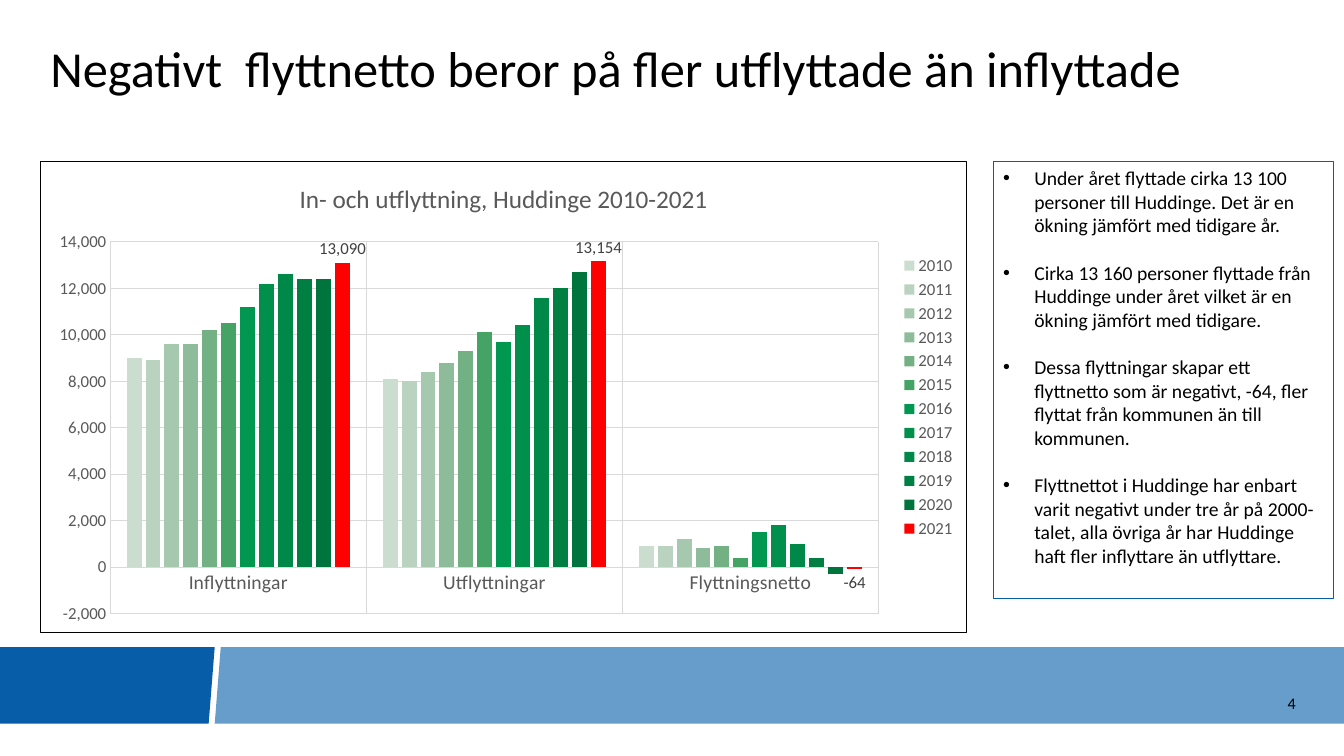
import pptx
import pptx.chart.data
import pptx.dml.color
import pptx.enum.chart
import pptx.enum.text
import pptx.oxml
import pptx.util
from pptx.dml.color import RGBColor
from pptx.util import Inches, Pt

FONT = "Calibri"
BLACK = RGBColor(0x00, 0x00, 0x00)
DARK = RGBColor(0x40, 0x40, 0x40)
GREY = RGBColor(0x59, 0x59, 0x59)
PALE = RGBColor(0xD9, 0xD9, 0xD9)
BLUE = RGBColor(0x08, 0x5D, 0xA9)
SKY = RGBColor(0x66, 0x9D, 0xCB)
NS = ('xmlns:c="http://schemas.openxmlformats.org/drawingml/2006/chart" '
      'xmlns:a="http://schemas.openxmlformats.org/drawingml/2006/main"')

GROUPS = ["Inflyttningar", "Utflyttningar", "Flyttningsnetto"]
YEARS = [
    ("2010", (9000, 8100, 900), "CBDDCF"),
    ("2011", (8900, 8000, 900), "B9D3C0"),
    ("2012", (9600, 8400, 1200), "A6C8AE"),
    ("2013", (9600, 8800, 800), "8EBC9A"),
    ("2014", (10200, 9300, 900), "73B184"),
    ("2015", (10500, 10100, 400), "45A365"),
    ("2016", (11200, 9700, 1500), "009850"),
    ("2017", (12200, 10400, 1800), "00904C"),
    ("2018", (12600, 11600, 1000), "008848"),
    ("2019", (12400, 12000, 400), "007F43"),
    ("2020", (12400, 12700, -300), "00743D"),
    ("2021", (13090, 13154, -64), "FF0000"),
]
NOTES = [
    "Under året flyttade cirka 13 100 personer till Huddinge. Det är en ökning "
    "jämfört med tidigare år.",
    "Cirka 13 160 personer flyttade från Huddinge under året vilket är en ökning "
    "jämfört med tidigare.",
    "Dessa flyttningar skapar ett flyttnetto som är negativt, -64, fler flyttat "
    "från kommunen än till kommunen.",
    "Flyttnettot i Huddinge har enbart varit negativt under tre år på 2000-talet, "
    "alla övriga år har Huddinge haft fler inflyttare än utflyttare.",
]


def style(font, size, color=BLACK):
    font.name = FONT
    font.size = Pt(size)
    font.color.rgb = color


def place(shape, box):
    shape.left, shape.top, shape.width, shape.height = map(Inches, box)


def add_band(slide, box):
    """Footer band in two parts, split by a slanted gap."""
    left, top, width, height = box
    right, low = left + width, top + height
    split, slant, gap = left + 2.13, 0.06, 0.06
    parts = [
        (SKY, [(split + gap, top), (right, top), (right, low),
               (split + gap - slant, low)]),
        (BLUE, [(left, top), (split, top), (split - slant, low), (left, low)]),
    ]
    for color, points in parts:
        points = [(Inches(x), Inches(y)) for x, y in points]
        outline = slide.shapes.build_freeform(*points[0])
        outline.add_line_segments(points[1:])
        part = outline.convert_to_shape()
        part.shadow.inherit = False
        part.fill.solid()
        part.fill.fore_color.rgb = color
        part.line.fill.background()


def add_title(slide, box):
    title = slide.shapes.title
    place(title, box)
    frame = title.text_frame
    frame.text = "Negativt  flyttnetto beror på fler utflyttade än inflyttade"
    frame.vertical_anchor = pptx.enum.text.MSO_ANCHOR.TOP
    para = frame.paragraphs[0]
    para.alignment = pptx.enum.text.PP_ALIGN.LEFT
    para.line_spacing = 0.9
    style(para.runs[0].font, 36)


def add_number(slide, box):
    frame = slide.shapes.add_textbox(*map(Inches, box)).text_frame
    frame.word_wrap = True
    frame.vertical_anchor = pptx.enum.text.MSO_ANCHOR.MIDDLE
    frame.text = "4"
    para = frame.paragraphs[0]
    para.alignment = pptx.enum.text.PP_ALIGN.RIGHT
    style(para.runs[0].font, 11.5)


def add_notes(slide, box):
    panel = slide.shapes.add_textbox(*map(Inches, box))
    panel.line.color.rgb = BLUE
    panel.line.width = Pt(0.75)
    frame = panel.text_frame
    frame.word_wrap = True
    for i, note in enumerate(NOTES):
        para = frame.add_paragraph() if i else frame.paragraphs[0]
        para.text = note
        if i:
            para.space_before = Pt(17)
        props = para._p.get_or_add_pPr()
        props.set("marL", str(Inches(0.31)))
        props.set("indent", str(-Inches(0.31)))
        props.append(pptx.oxml.parse_xml(f'<a:buFont {NS} typeface="Arial"/>'))
        props.append(pptx.oxml.parse_xml(f'<a:buChar {NS} char="•"/>'))
        style(para.runs[0].font, 14)


def style_axis(axis, size):
    style(axis.tick_labels.font, size, GREY)
    axis.major_tick_mark = pptx.enum.chart.XL_TICK_MARK.NONE
    axis.has_major_gridlines = True
    grid = axis.major_gridlines.format.line
    grid.color.rgb = PALE
    grid.width = Pt(0.75)


def frame_chart(chart):
    """Draw the outer border and fix the inner plot area."""
    chart._chartSpace.chart.addnext(pptx.oxml.parse_xml(
        f'<c:spPr {NS}><a:noFill/><a:ln w="{Pt(0.75)}"><a:solidFill>'
        f'<a:srgbClr val="{BLACK}"/></a:solidFill></a:ln></c:spPr>'))
    plot = chart._chartSpace.chart.plotArea
    for old in plot.xpath("c:layout"):
        plot.remove(old)
    sizes = {"x": 0.075, "y": 0.17, "w": 0.83, "h": 0.79}
    edges = "".join(f'<c:{key} val="{val}"/>' for key, val in sizes.items())
    plot.insert(0, pptx.oxml.parse_xml(
        f'<c:layout {NS}><c:manualLayout><c:layoutTarget val="inner"/>'
        f'<c:xMode val="edge"/><c:yMode val="edge"/>{edges}'
        f'</c:manualLayout></c:layout>'))


def add_chart(slide, box):
    data = pptx.chart.data.CategoryChartData(number_format="#,##0")
    data.categories = GROUPS
    for year, values, _ in YEARS:
        data.add_series(year, values)
    kind = pptx.enum.chart.XL_CHART_TYPE.COLUMN_CLUSTERED
    chart = slide.shapes.add_chart(kind, *map(Inches, box), data).chart
    style(chart.font, 12)

    chart.has_title = True
    title = chart.chart_title
    title.include_in_layout = False
    title.text_frame.text = "In- och utflyttning, Huddinge 2010-2021"
    font = title.text_frame.paragraphs[0].runs[0].font
    style(font, 18, GREY)
    font.bold = False

    chart.has_legend = True
    chart.legend.position = pptx.enum.chart.XL_LEGEND_POSITION.RIGHT
    chart.legend.include_in_layout = False
    style(chart.legend.font, 12, GREY)

    style_axis(chart.category_axis, 14)
    chart.category_axis.format.line.color.rgb = PALE
    chart.category_axis.format.line.width = Pt(0.75)
    axis = chart.value_axis
    style_axis(axis, 12)
    axis.format.line.fill.background()
    axis.minimum_scale, axis.maximum_scale, axis.major_unit = -2000, 14000, 2000
    axis.tick_labels.number_format = "#,##0"
    axis.tick_labels.number_format_is_linked = False

    plot = chart.plots[0]
    plot.gap_width, plot.overlap = 219, -27
    plot.vary_by_categories = False
    for series, (_, _, color) in zip(plot.series, YEARS):
        series.invert_if_negative = False
        series.format.fill.solid()
        series.format.fill.fore_color.rgb = RGBColor.from_string(color)
    labels = plot.series[-1].data_labels
    labels.show_value = True
    labels.position = pptx.enum.chart.XL_LABEL_POSITION.OUTSIDE_END
    labels.number_format = "#,##0"
    labels.number_format_is_linked = False
    style(labels.font, 12, DARK)
    frame_chart(chart)


def main():
    deck = pptx.Presentation()
    deck.slide_width, deck.slide_height = Inches(13.33), Inches(7.5)
    slide = deck.slides.add_slide(deck.slide_layouts[5])
    add_band(slide, (0, 6.42, 13.33, 0.76))
    add_title(slide, (0.4, 0.39, 12.38, 0.8))
    add_number(slide, (11.36, 6.77, 1.59, 0.4))
    add_notes(slide, (9.85, 1.6, 3.38, 4.34))
    add_chart(slide, (0.4, 1.6, 9.19, 4.68))
    deck.save("out.pptx")


if __name__ == "__main__":
    main()
